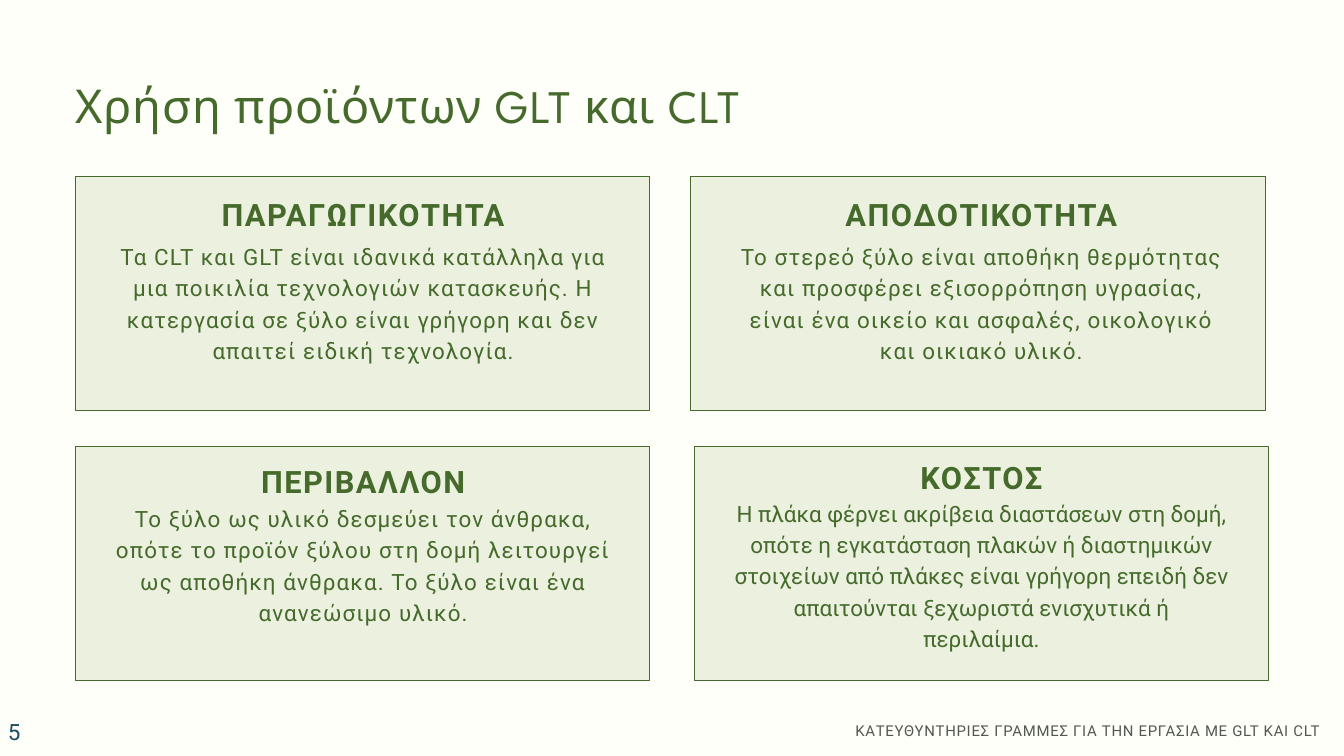
from pptx import Presentation
from pptx.dml.color import RGBColor
from pptx.enum.shapes import MSO_SHAPE
from pptx.enum.text import MSO_ANCHOR, MSO_AUTO_SIZE, PP_ALIGN
from pptx.util import Inches, Pt

TITLE = "Χρήση προϊόντων GLT και CLT"
FOOTER = "ΚΑΤΕΥΘΥΝΤΗΡΙΕΣ ΓΡΑΜΜΕΣ ΓΙΑ ΤΗΝ ΕΡΓΑΣΙΑ ΜΕ GLT ΚΑΙ CLT"
PAGE_NUMBER = "5"

# Row by row: heading, body, heading and body offsets from the card top,
# body letter spacing, nudge of the card to the right
CARDS = [
    ("ΠΑΡΑΓΩΓΙΚΟΤΗΤΑ",
     "Τα CLT και GLT είναι ιδανικά κατάλληλα για μια ποικιλία τεχνολογιών κατασκευής. "
     "Η κατεργασία σε ξύλο είναι γρήγορη και δεν απαιτεί ειδική τεχνολογία.",
     0.27, 0.93, 1.2, 0),
    ("ΑΠΟΔΟΤΙΚΟΤΗΤΑ",
     "Το στερεό ξύλο είναι αποθήκη θερμότητας και προσφέρει εξισορρόπηση υγρασίας, "
     "είναι ένα οικείο και ασφαλές, οικολογικό και οικιακό υλικό.",
     0.27, 0.93, 1.2, 0),
    ("ΠΕΡΙΒΑΛΛΟΝ",
     "Το ξύλο ως υλικό δεσμεύει τον άνθρακα, οπότε το προϊόν ξύλου στη δομή λειτουργεί "
     "ως αποθήκη άνθρακα. Το ξύλο είναι ένα ανανεώσιμο υλικό.",
     0.22, 0.81, 1.2, 0),
    ("ΚΟΣΤΟΣ",
     "Η πλάκα φέρνει ακρίβεια διαστάσεων στη δομή, οπότε η εγκατάσταση πλακών ή "
     "διαστημικών στοιχείων από πλάκες είναι γρήγορη επειδή δεν απαιτούνται ξεχωριστά "
     "ενισχυτικά ή περιλαίμια.",
     0.16, 0.73, 0, 0.05),
]

COLORS = {"background": "FEFFF8", "green": "456A2C", "card": "EBF1DE",
          "footer": "52584D", "number": "1E4D65"}

SLIDE_WIDTH, SLIDE_HEIGHT = 20, 11.25
GRID_LEFT, GRID_TOP = 1.12, 2.62
CARD_WIDTH, CARD_HEIGHT = 8.55, 3.48
COLUMN_GAP, ROW_GAP = 0.61, 0.54
TEXT_WIDTH = 7.39
COLUMN_INSETS = (0.59, 0.63)


def color(name):
    return RGBColor.from_string(COLORS[name])


def place(shape, left, top, width, height):
    shape.left, shape.top = Inches(left), Inches(top)
    shape.width, shape.height = Inches(width), Inches(height)


def set_text(shape, text, size, leading=None, spacing=0, ink="green", bold=False,
             align=PP_ALIGN.LEFT, font="Roboto", inset=0, anchor=MSO_ANCHOR.TOP):
    frame = shape.text_frame
    frame.text = text
    frame.word_wrap = True
    frame.auto_size = MSO_AUTO_SIZE.NONE
    frame.vertical_anchor = anchor
    frame.margin_left = frame.margin_right = Inches(inset)
    frame.margin_top = frame.margin_bottom = Inches(inset / 2)
    paragraph = frame.paragraphs[0]
    paragraph.alignment = align
    if leading:
        paragraph.line_spacing = Pt(leading)
    run = paragraph.runs[0]
    run.font.name = font
    run.font.size = Pt(size)
    run.font.bold = bold
    run.font.color.rgb = color(ink)
    if spacing:
        run.font._element.set("spc", str(round(spacing * 100)))


def add_text(slide, box, text, size, **style):
    shape = slide.shapes.add_textbox(*map(Inches, box))
    set_text(shape, text, size, **style)


def add_card(slide, index, card):
    heading, body, heading_offset, body_offset, body_spacing, nudge = card
    row, column = divmod(index, 2)
    grid_left = GRID_LEFT + column * (CARD_WIDTH + COLUMN_GAP)
    top = GRID_TOP + row * (CARD_HEIGHT + ROW_GAP)

    panel = slide.shapes.add_shape(MSO_SHAPE.RECTANGLE, 0, 0, 0, 0)
    place(panel, grid_left + nudge, top, CARD_WIDTH, CARD_HEIGHT)
    panel.shadow.inherit = False
    panel.fill.solid()
    panel.fill.fore_color.rgb = color("card")
    panel.line.color.rgb = color("green")
    panel.line.width = Pt(0.75)

    text_left = grid_left + COLUMN_INSETS[column]
    add_text(slide, (text_left, top + heading_offset, TEXT_WIDTH, 0.57), heading, 33,
             leading=41.2, spacing=1.6, bold=True, align=PP_ALIGN.CENTER)
    add_text(slide, (text_left, top + body_offset, TEXT_WIDTH, 2.37), body, 24,
             leading=33.6, spacing=body_spacing, align=PP_ALIGN.CENTER)


def main():
    presentation = Presentation()
    presentation.slide_width = Inches(SLIDE_WIDTH)
    presentation.slide_height = Inches(SLIDE_HEIGHT)
    slide = presentation.slides.add_slide(presentation.slide_layouts[5])
    slide.background.fill.solid()
    slide.background.fill.fore_color.rgb = color("background")

    title = slide.shapes.title
    place(title, GRID_LEFT, 1.05, 2 * CARD_WIDTH + COLUMN_GAP, 0.94)
    set_text(title, TITLE, 50, leading=66.8, spacing=1, font="League Spartan")

    for index, card in enumerate(CARDS):
        add_card(slide, index, card)

    add_text(slide, (11.33, 10.7, 8.32, 0.3), FOOTER, 16, leading=22.4, spacing=0.8,
             ink="footer", align=PP_ALIGN.RIGHT)
    add_text(slide, (0.02, 10.69, 2.33, 0.4), PAGE_NUMBER, 24, spacing=1.2,
             ink="number", inset=0.1, anchor=MSO_ANCHOR.MIDDLE)
    presentation.save("out.pptx")


if __name__ == "__main__":
    main()
